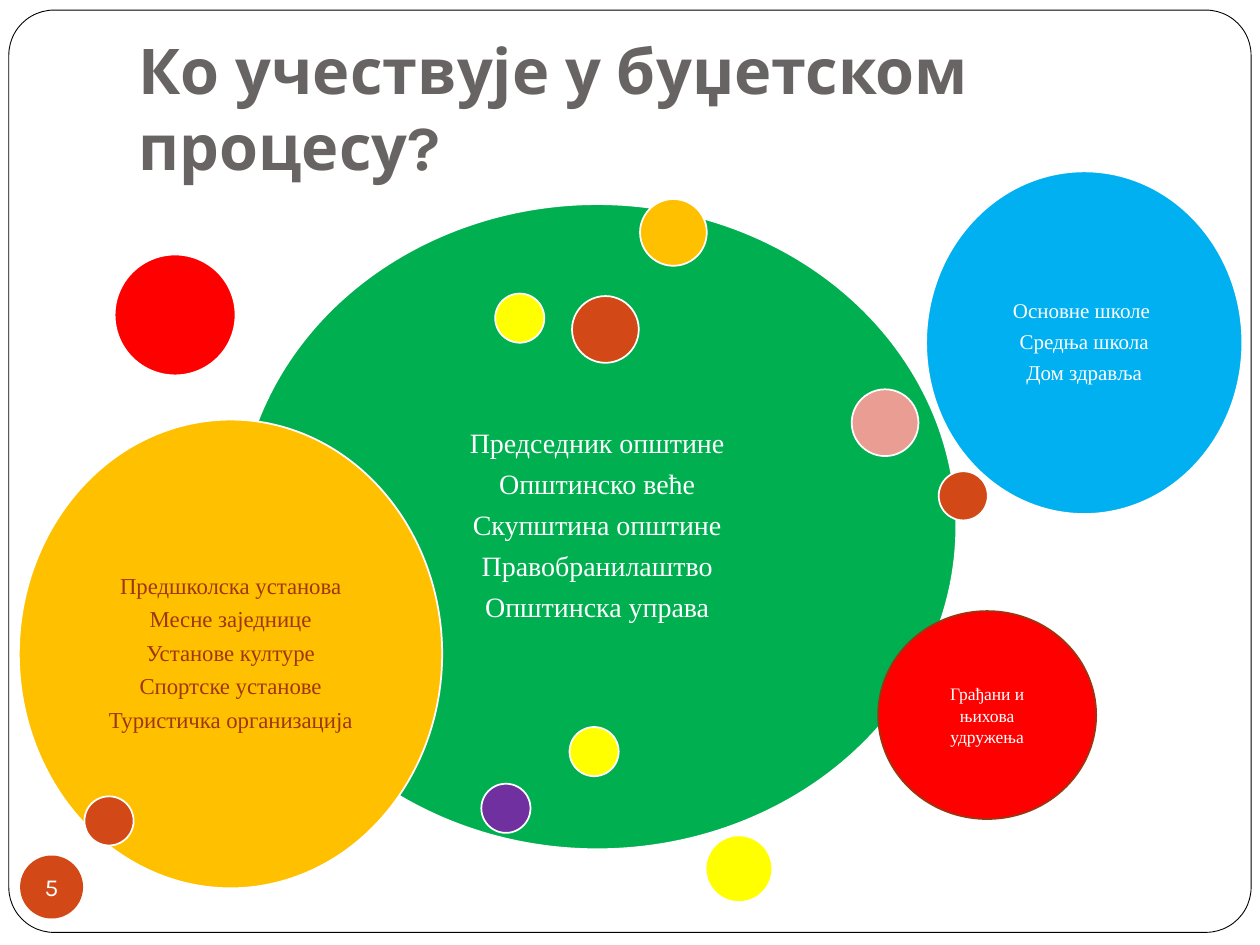
from pptx import Presentation
from pptx.dml.color import RGBColor
from pptx.enum import shapes, text
from pptx.util import Inches, Pt

WHITE = RGBColor(0xFF, 0xFF, 0xFF)
BLACK = RGBColor(0, 0, 0)
GRAY = RGBColor(0x69, 0x64, 0x64)
RUST = RGBColor(0xD3, 0x48, 0x17)
BROWN = RGBColor(0x9E, 0x36, 0x11)
DARK_RUST = RGBColor(0x9C, 0x35, 0x11)
GREEN = RGBColor(0x00, 0xB0, 0x50)
AMBER = RGBColor(0xFF, 0xC0, 0x00)
PURPLE = RGBColor(0x70, 0x30, 0xA0)
YELLOW = RGBColor(0xFF, 0xFF, 0x00)
RED = RGBColor(0xFF, 0x00, 0x00)
BLUE = RGBColor(0x00, 0xB0, 0xF0)
PINK = RGBColor(0xE9, 0x9D, 0x93)
TITLE_FONT = "Karla"
BODY_FONT = "Times New Roman"
SMALL, MEDIUM, LARGE = 0.39, 0.53, 0.96


def add_shape(s, kind, box, fill, line=None, width=1):
    """Add a flat preset shape in box (left, top, width, height in inches)."""
    sp = s.shapes.add_shape(kind, *map(Inches, box))
    sp.shadow.inherit = False
    sp.fill.solid()
    sp.fill.fore_color.rgb = fill
    if line is None:
        sp.line.fill.background()
    else:
        sp.line.color.rgb = line
        sp.line.width = Pt(width)
    return sp


def add_ellipse(s, box, fill, line=WHITE):
    """Add an ellipse in box."""
    return add_shape(s, shapes.MSO_SHAPE.OVAL, box, fill, line)


def add_dot(s, left, top, size, fill):
    """Add a round decorative dot."""
    add_ellipse(s, (left, top, size, size), fill)


def set_insets(tf, left, top, right, bottom):
    """Set the text margins in inches."""
    tf.margin_left, tf.margin_top = Inches(left), Inches(top)
    tf.margin_right, tf.margin_bottom = Inches(right), Inches(bottom)


def write_lines(sp, lines, size, color, font=BODY_FONT, inset=0.05, spaced=True):
    """Write centred paragraphs in the middle of a shape."""
    tf = sp.text_frame
    tf.word_wrap = True
    tf.vertical_anchor = text.MSO_ANCHOR.MIDDLE
    set_insets(tf, inset, inset, inset, inset)
    tf.text = "\n".join(lines)
    for p in tf.paragraphs:
        p.alignment = text.PP_ALIGN.CENTER
        if spaced:
            p.line_spacing = 0.9
            p.space_after = Pt(round(size * 0.39, 1))
        for r in p.runs:
            r.font.size = Pt(size)
            r.font.name = font
            r.font.color.rgb = color


def add_title(s, box):
    """Place and format the title placeholder."""
    title = s.shapes.title
    title.left, title.top, title.width, title.height = map(Inches, box)
    tf = title.text_frame
    tf.text = "Ко учествује у буџетском процесу?"
    tf.word_wrap = True
    tf.auto_size = text.MSO_AUTO_SIZE.NONE
    tf.vertical_anchor = text.MSO_ANCHOR.BOTTOM
    set_insets(tf, 0.1, 0.05, 0.1, 0.1)
    p = tf.paragraphs[0]
    p.alignment = text.PP_ALIGN.LEFT
    font = p.runs[0].font
    font.name, font.size, font.bold = TITLE_FONT, Pt(36), True
    font.color.rgb = GRAY


def add_frame(s, box):
    """Add the rounded slide border behind the title."""
    frame = add_shape(s, shapes.MSO_SHAPE.ROUNDED_RECTANGLE, box, WHITE, BLACK, 0.5)
    frame.adjustments[0] = 0.049
    s.shapes.title.element.addprevious(frame.element)


def add_page_number(s, box):
    """Add the round page number badge."""
    sp = add_shape(s, shapes.MSO_SHAPE.OVAL, box, RUST)
    write_lines(sp, ["5"], 14, WHITE, TITLE_FONT, 0, False)
    sp.text_frame.word_wrap = False


def add_municipality(s, box):
    """Add the central circle of municipal bodies and the dots around it."""
    sp = add_ellipse(s, box, GREEN)
    write_lines(sp, ["Председник општине", "Општинско веће", "Скупштина општине",
                     "Правобранилаштво", "Општинска управа"], 16, WHITE, inset=0.07)
    left, top = box[:2]
    for dx, dy, size, fill in (
            (3.19, -0.04, MEDIUM, AMBER), (1.93, 4.6, SMALL, PURPLE),
            (5.56, 2.12, SMALL, RUST), (3.71, 5.01, MEDIUM, YELLOW),
            (2.04, 0.71, SMALL, YELLOW), (2.65, 0.73, MEDIUM, RUST),
            (-0.98, 0.4, LARGE, RED), (4.87, 1.47, MEDIUM, PINK),
            (2.63, 4.15, SMALL, YELLOW)):
        add_dot(s, left + dx, top + dy, size, fill)


def add_institutions(s, box):
    """Add the circle of local institutions with its dot."""
    sp = add_ellipse(s, box, AMBER)
    write_lines(sp, ["Предшколска установа", "Месне заједнице", "Установе културе",
                     "Спортске установе", "Туристичка организација"], 13, BROWN)
    add_dot(s, box[0] + 0.52, box[1] + 2.99, SMALL, RUST)


def add_schools(s, box):
    """Add the circle of schools and the health centre."""
    sp = add_ellipse(s, box, BLUE)
    write_lines(sp, ["Основне школе ", "Средња школа", "Дом здравља"], 12, WHITE)


def add_citizens(s, box):
    """Add the circle of citizens and their associations."""
    sp = add_ellipse(s, box, RED, DARK_RUST)
    write_lines(sp, ["Грађани и њихова удружења"], 10, WHITE, spaced=False)
    set_insets(sp.text_frame, 0.1, 0.05, 0.1, 0.05)


def main():
    """Build the slide and save it."""
    prs = Presentation()
    prs.slide_width, prs.slide_height = Inches(10), Inches(7.5)
    s = prs.slides.add_slide(prs.slide_layouts[5])
    add_title(s, (1, 0.3, 8.5, 1.25))
    add_frame(s, (0.07, 0.08, 9.86, 7.32))
    add_page_number(s, (0.16, 6.79, 0.5, 0.5))
    add_municipality(s, (1.89, 1.62, 5.7, 5.12))
    add_institutions(s, (0.15, 3.33, 3.36, 3.72))
    add_schools(s, (7.35, 1.36, 2.51, 2.72))
    add_citizens(s, (6.97, 4.85, 1.73, 1.65))
    prs.save("out.pptx")


if __name__ == "__main__":
    main()
